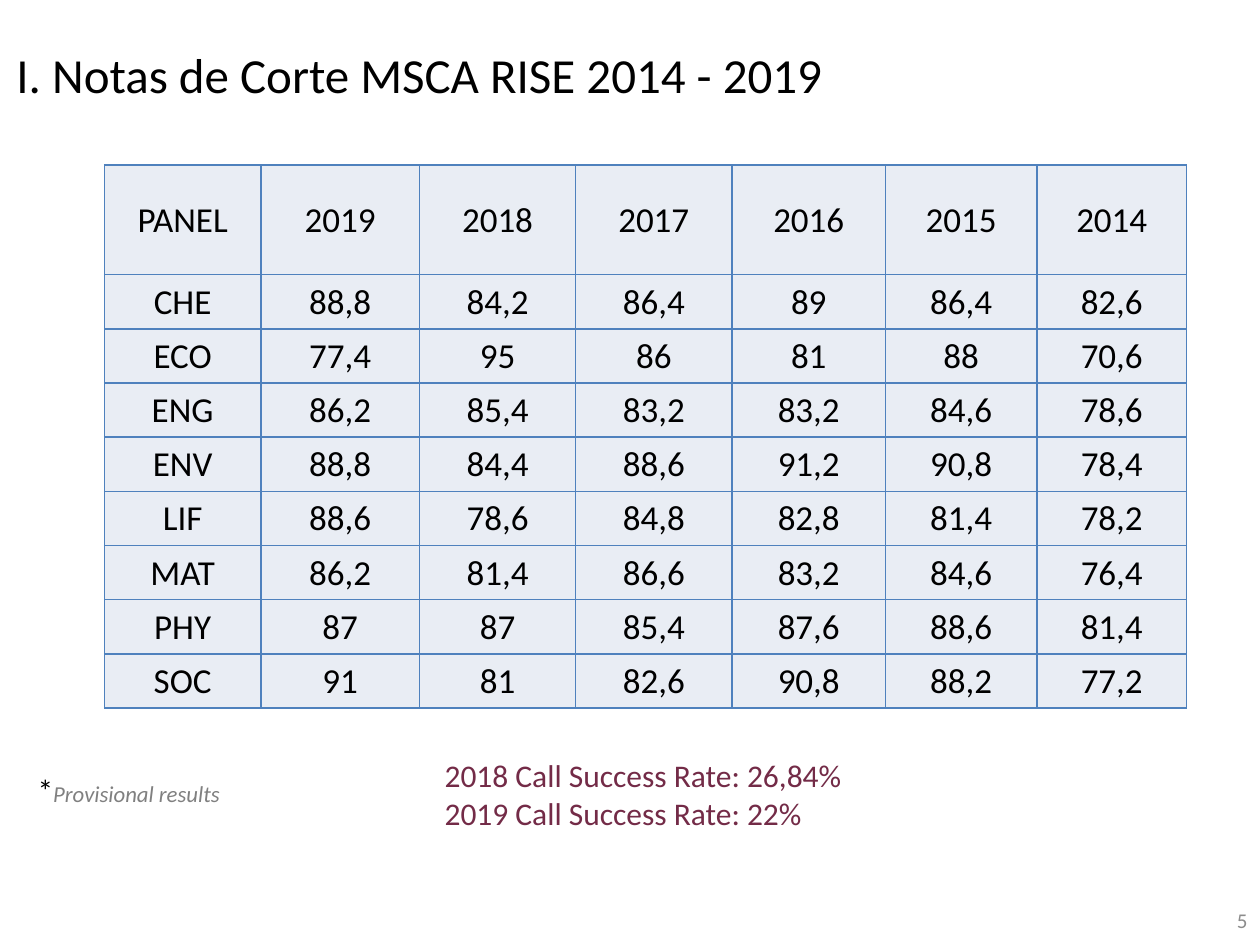
import pptx
import pptx.util
import pptx.dml.color
import pptx.enum.text
from lxml import etree
from pptx.oxml.ns import qn

Inches = pptx.util.Inches
ALIGN = pptx.enum.text.PP_ALIGN
ANCHOR = pptx.enum.text.MSO_ANCHOR

# Content
TITLE = "I. Notas de Corte MSCA RISE 2014 - 2019"
CUTOFFS = [
    ("PANEL", "2019", "2018", "2017", "2016", "2015", "2014"),
    ("CHE", "88,8", "84,2", "86,4", "89", "86,4", "82,6"),
    ("ECO", "77,4", "95", "86", "81", "88", "70,6"),
    ("ENG", "86,2", "85,4", "83,2", "83,2", "84,6", "78,6"),
    ("ENV", "88,8", "84,4", "88,6", "91,2", "90,8", "78,4"),
    ("LIF", "88,6", "78,6", "84,8", "82,8", "81,4", "78,2"),
    ("MAT", "86,2", "81,4", "86,6", "83,2", "84,6", "76,4"),
    ("PHY", "87", "87", "85,4", "87,6", "88,6", "81,4"),
    ("SOC", "91", "81", "82,6", "90,8", "88,2", "77,2"),
]
SUCCESS_RATES = ["2018 Call Success Rate: 26,84%", "2019 Call Success Rate: 22%"]
PAGE_NUMBER = "5"

# Style
FONT = "Calibri"
BLACK, GREY, PAGE_GREY, WINE = "000000", "808080", "8C8C8C", "732B47"
CELL_FILL, BORDER = "E9EDF4", "4F81BD"
COLUMN_WIDTHS = [1.24, 1.26, 1.24, 1.24, 1.22, 1.2, 1.19]
HEADER_HEIGHT, ROW_HEIGHT = 0.87, 0.43


def color(value):
    return pptx.dml.color.RGBColor.from_string(value)


def write(paragraph, text, size=18, fill=BLACK, italic=False, align=ALIGN.LEFT):
    paragraph.alignment = align
    run = paragraph.add_run()
    run.text = text
    run.font.name = FONT
    run.font.size = pptx.util.Pt(size)
    run.font.italic = italic
    run.font.bold = False
    run.font.color.rgb = color(fill)


def add_text_box(slide, left, top, width, height, anchor=ANCHOR.TOP):
    box = slide.shapes.add_textbox(*map(Inches, (left, top, width, height)))
    box.text_frame.word_wrap = True
    box.text_frame.vertical_anchor = anchor
    return box.text_frame


def style_cell(cell):
    cell.vertical_anchor = ANCHOR.MIDDLE
    cell.margin_left = cell.margin_right = cell.margin_top = Inches(0.01)
    cell.margin_bottom = 0
    properties = cell._tc.get_or_add_tcPr()
    for side in ("a:lnL", "a:lnR", "a:lnT", "a:lnB"):
        line = etree.SubElement(properties, qn(side), w=str(pptx.util.Pt(1)))
        solid = etree.SubElement(line, qn("a:solidFill"))
        etree.SubElement(solid, qn("a:srgbClr"), val=BORDER)
    cell.fill.solid()
    cell.fill.fore_color.rgb = color(CELL_FILL)


def add_cutoff_table(slide):
    heights = [HEADER_HEIGHT] + [ROW_HEIGHT] * (len(CUTOFFS) - 1)
    table = slide.shapes.add_table(
        len(CUTOFFS), len(COLUMN_WIDTHS), Inches(0.83), Inches(1.31),
        Inches(sum(COLUMN_WIDTHS)), Inches(sum(heights))).table
    for column, width in zip(table.columns, COLUMN_WIDTHS):
        column.width = Inches(width)
    for row, height, values in zip(table.rows, heights, CUTOFFS):
        row.height = Inches(height)
        for cell, value in zip(row.cells, values):
            style_cell(cell)
            write(cell.text_frame.paragraphs[0], value, size=20, align=ALIGN.CENTER)


def main():
    presentation = pptx.Presentation()
    presentation.slide_width, presentation.slide_height = Inches(10), Inches(7.5)
    slide = presentation.slides.add_slide(presentation.slide_layouts[5])

    # Title
    title = slide.shapes.title
    title.left, title.top = Inches(-0.06), Inches(0)
    title.width, title.height = Inches(9), Inches(1.18)
    title.text_frame.margin_left = Inches(0.19)
    title.text_frame.vertical_anchor = ANCHOR.MIDDLE
    write(title.text_frame.paragraphs[0], TITLE, size=28)

    # Footnote
    footnote = add_text_box(slide, 0.2, 6.07, 7.64, 0.39).paragraphs[0]
    write(footnote, "*")
    write(footnote, "Provisional results", size=13, fill=GREY, italic=True)

    # Success rates
    rates = add_text_box(slide, 3.43, 5.95, 5.79, 0.7)
    for index, rate in enumerate(SUCCESS_RATES):
        paragraph = rates.add_paragraph() if index else rates.paragraphs[0]
        write(paragraph, rate, fill=WINE)

    # Page number
    page = add_text_box(slide, 7.67, 7.1, 2.33, 0.4, anchor=ANCHOR.MIDDLE)
    write(page.paragraphs[0], PAGE_NUMBER, size=12, fill=PAGE_GREY, align=ALIGN.RIGHT)

    # Table of cut-off marks
    add_cutoff_table(slide)
    presentation.save("out.pptx")


if __name__ == "__main__":
    main()
